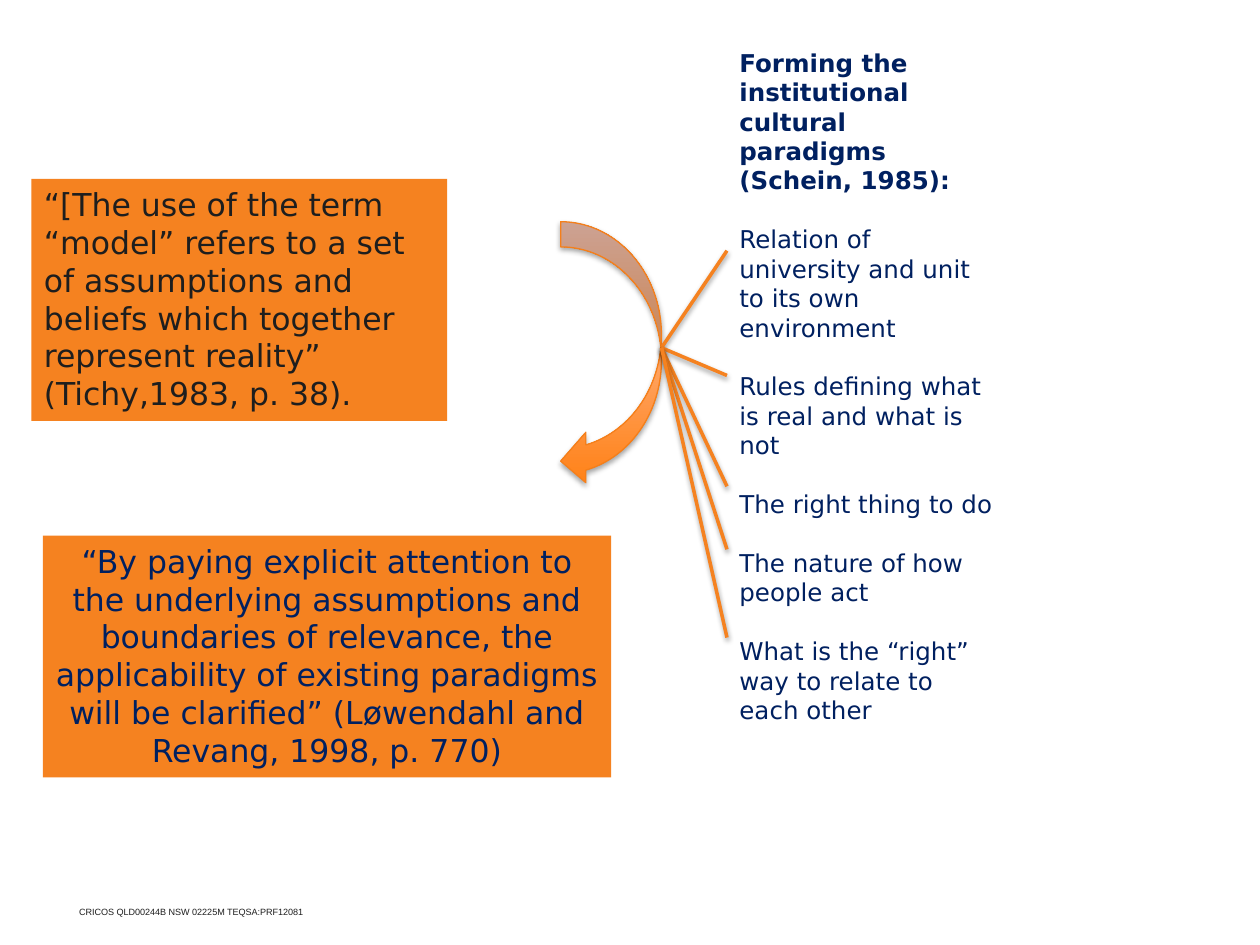
import pptx
import pptx.util
import pptx.dml.color
import pptx.enum.shapes
import pptx.enum.text
import pptx.oxml

Inches, Pt = pptx.util.Inches, pptx.util.Pt
rgb = pptx.dml.color.RGBColor.from_string
shapes = pptx.enum.shapes.MSO_SHAPE
align = pptx.enum.text.PP_ALIGN
hues = {"orange": "F58220", "edge": "F57F1A", "deep": "FF8116",
        "pale": "FFCBB8", "navy": "002060", "ink": "1E1E1E"}

deck = pptx.Presentation()
deck.slide_width, deck.slide_height = Inches(10), Inches(7.5)
slide = deck.slides.add_slide(deck.slide_layouts[6])


def write(para, text, size, hue, face="DejaVu Sans", bold=False):
    run = para.add_run()
    run.text = text
    run.font.size, run.font.name, run.font.bold = Pt(size), face, bold
    run.font.color.rgb = rgb(hues[hue])
    return run


def shade(item, drop, alpha):
    """Give a shape or connector a soft shadow below it."""
    item._element.spPr.append(pptx.oxml.parse_xml(
        '<a:effectLst xmlns:a="http://schemas.openxmlformats.org/drawingml/2006/main">'
        f'<a:outerShdw blurRad="{Pt(3.1)}" dist="{Pt(drop)}" dir="5400000" rotWithShape="0">'
        f'<a:srgbClr val="000000"><a:alpha val="{alpha * 1000}"/></a:srgbClr>'
        '</a:outerShdw></a:effectLst>'))


# Footer
foot = slide.shapes.add_textbox(Inches(0.53), Inches(7.13), Inches(2.73), Inches(0.2))
foot.text_frame.word_wrap = True
run = write(foot.text_frame.paragraphs[0],
            "CRICOS QLD00244B NSW 02225M TEQSA:PRF12081", 9, "ink", "Arial")
run.font._element.set("baseline", "30000")

# Quotes
quotes = [
    (0.34, 4.25, 4.51, align.CENTER, "navy",
     "“By paying explicit attention to the underlying assumptions and boundaries of "
     "relevance, the applicability of existing paradigms will be clarified” "
     "(Løwendahl and Revang, 1998, p. 770)"),
    (0.25, 1.42, 3.3, align.LEFT, "ink",
     "“[The use of the term “model” refers to a set of assumptions and beliefs which "
     "together represent reality” (Tichy,1983, p. 38)."),
]
for left, top, width, side, hue, text in quotes:
    box = slide.shapes.add_shape(shapes.RECTANGLE, Inches(left), Inches(top),
                                 Inches(width), Inches(1.92))
    box.shadow.inherit = False
    box.fill.solid()
    box.fill.fore_color.rgb = rgb(hues["orange"])
    box.line.fill.background()
    frame = box.text_frame
    frame.word_wrap = True
    frame.vertical_anchor = pptx.enum.text.MSO_ANCHOR.TOP
    frame.paragraphs[0].alignment = side
    write(frame.paragraphs[0], text, 18, hue)

# Paradigm list
items = [
    "Forming the institutional cultural paradigms (Schein, 1985):",
    "Relation of university and unit to its own environment",
    "Rules defining what is real and what is not",
    "The right thing to do",
    "The nature of how people act",
    "What is the “right” way to relate to each other",
]
box = slide.shapes.add_textbox(Inches(5.77), Inches(0.33), Inches(2.26), Inches(5.28))
frame = box.text_frame
frame.word_wrap = True
for i, text in enumerate(items):
    para = frame.paragraphs[0] if i == 0 else frame.add_paragraph()
    if i:
        para.space_before = Pt(16.8)
    write(para, text, 14, "navy", bold=i == 0)

# Curved arrow
arrow = slide.shapes.add_shape(shapes.CURVED_LEFT_ARROW, Inches(4.45), Inches(1.76),
                               Inches(0.8), Inches(2.1))
arrow.fill.gradient()
arrow.fill.gradient_angle = 90
for stop, hue, place in zip(arrow.fill.gradient_stops, ("deep", "pale"), (0, 1)):
    stop.color.rgb = rgb(hues[hue])
    stop.position = place
arrow.line.color.rgb = rgb(hues["edge"])
arrow.line.width = Pt(0.75)
shade(arrow, 1.8, 35)

# Lines fanning from the list to the arrow
for y in (1.99, 2.98, 3.86, 4.36, 5.06):
    ray = slide.shapes.add_connector(pptx.enum.shapes.MSO_CONNECTOR.STRAIGHT,
                                     Inches(5.77), Inches(y), Inches(5.25), Inches(2.76))
    ray.line.color.rgb = rgb(hues["orange"])
    ray.line.width = Pt(2)
    shade(ray, 1.6, 38)

deck.save("out.pptx")
